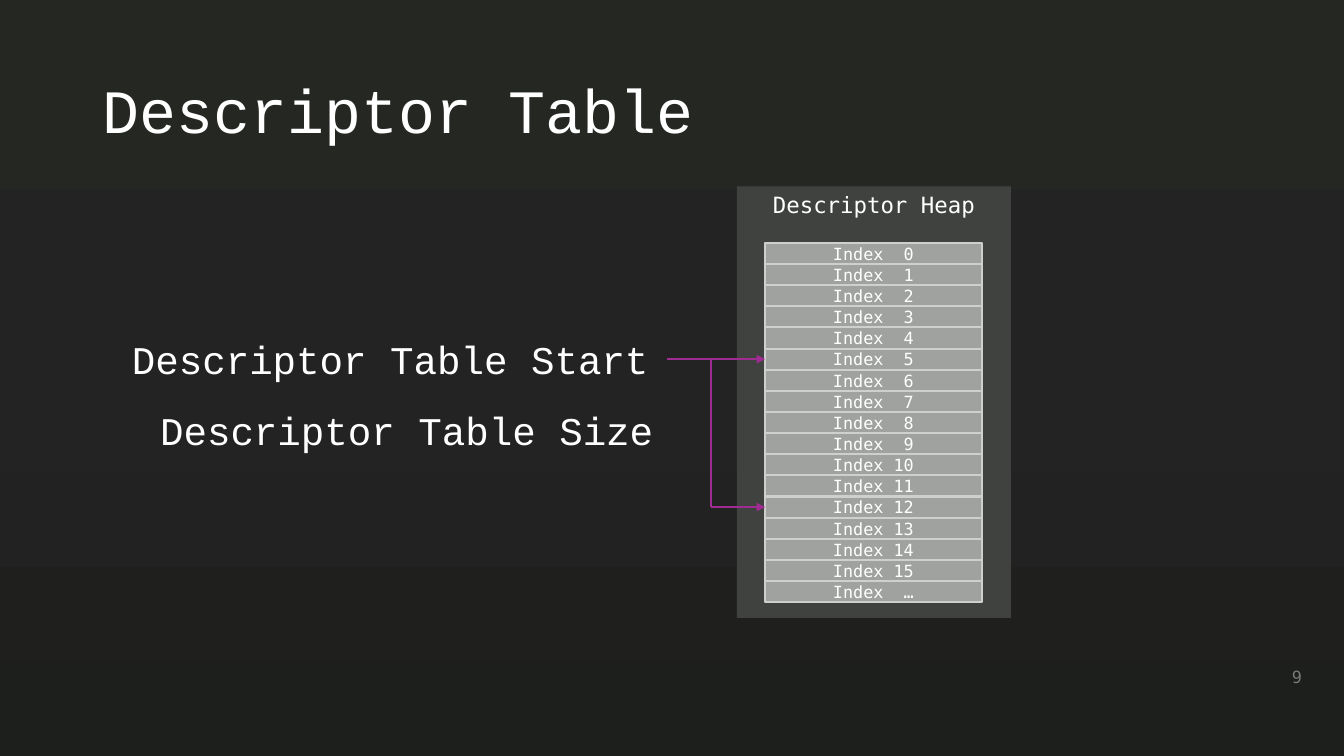
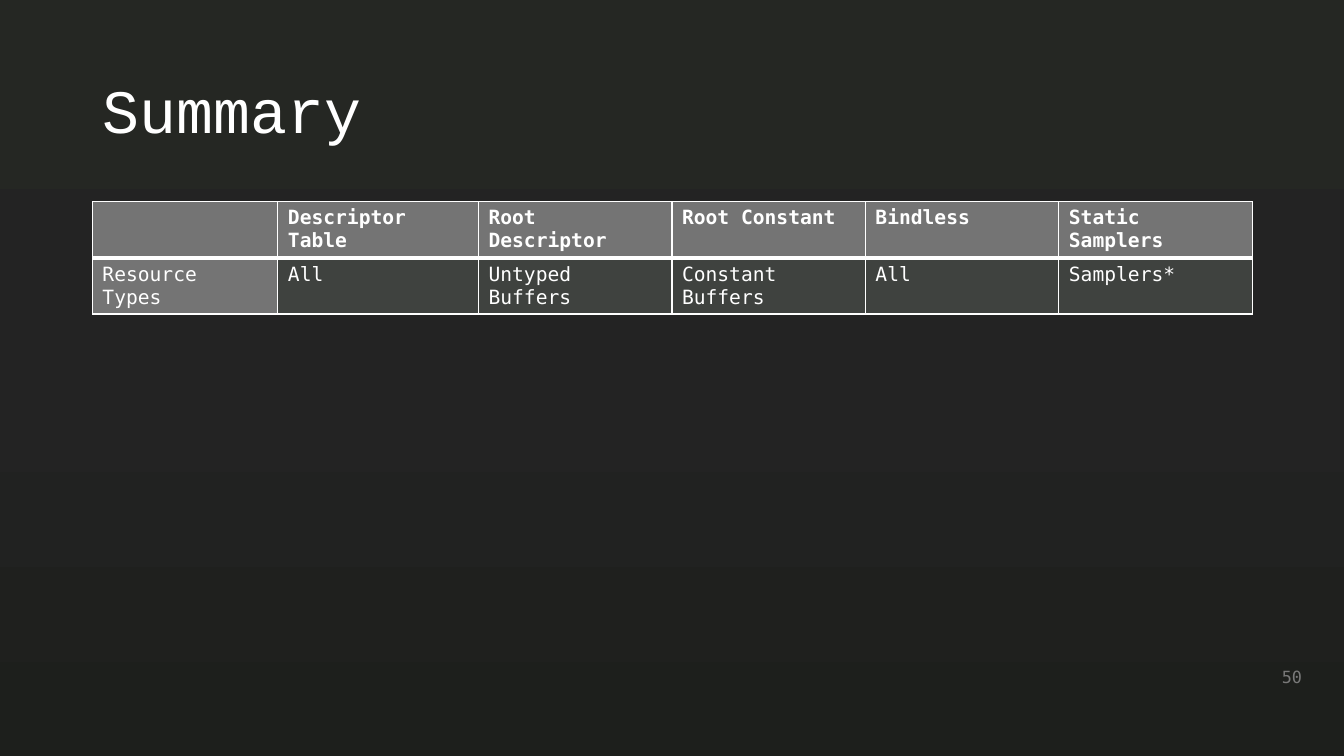
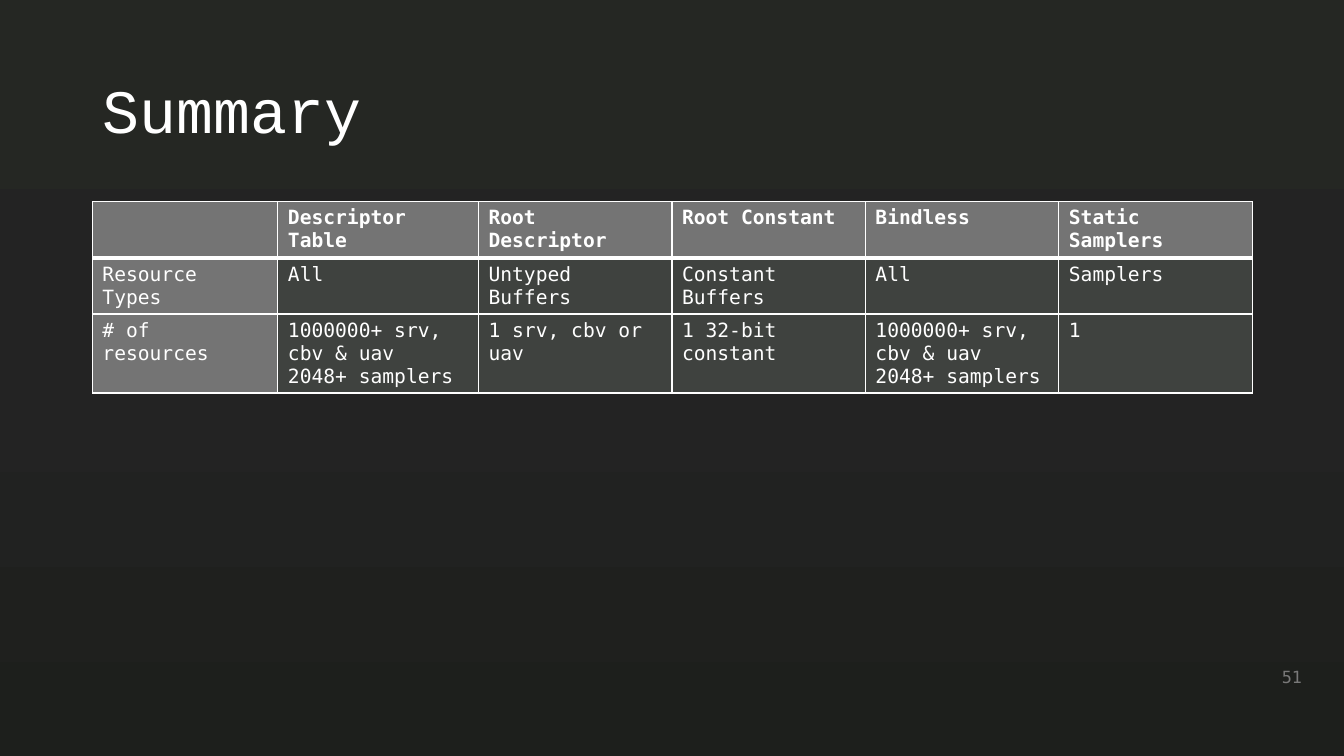
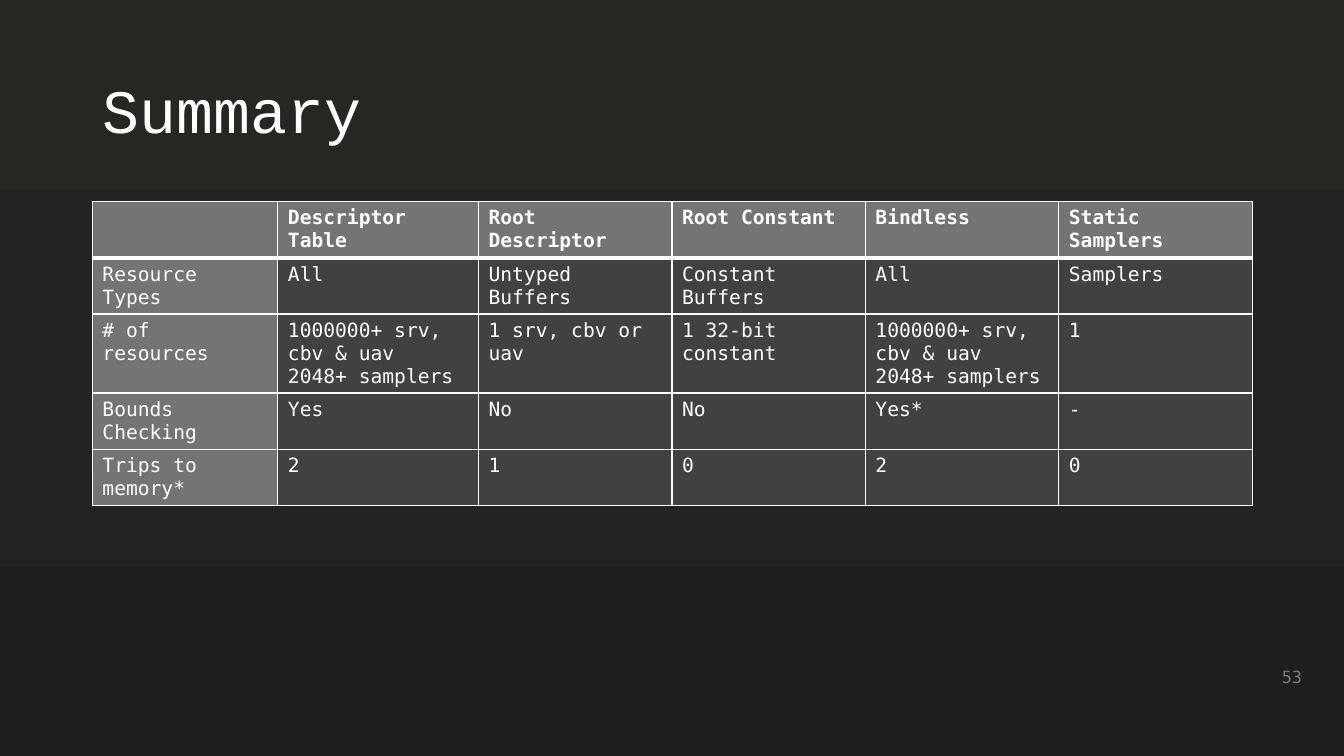
from copy import deepcopy
from dataclasses import dataclass
from typing import Optional

from lxml.etree import SubElement
from pptx import Presentation
from pptx.dml.color import RGBColor
from pptx.enum.shapes import MSO_CONNECTOR, MSO_SHAPE
from pptx.enum.text import MSO_ANCHOR, MSO_AUTO_SIZE, PP_ALIGN
from pptx.oxml import parse_xml
from pptx.oxml.ns import nsdecls, qn
from pptx.presentation import Presentation as Deck
from pptx.shapes.autoshape import Shape
from pptx.slide import Slide
from pptx.table import _Cell
from pptx.text.text import TextFrame
from pptx.util import Emu, Inches, Pt

COLS, ROWS = 96, 54
UNIT = Inches(7.5) / ROWS


def grid(n: float) -> Emu:
    """Turn grid columns or rows into a length."""
    return Emu(round(n * UNIT))


@dataclass(frozen=True)
class Theme:
    """Colours, fonts and type sizes of the deck."""
    backdrop: tuple[str, ...] = ("252723", "232323", "1D1F1C")
    text: str = "FFFFFF"
    muted: str = "797979"
    panel: str = "3F423F"
    heading: str = "747474"
    slot: str = "9FA29F"
    slot_line: str = "CFCFCF"
    arrow: str = "A02B93"
    display: str = "Courier New"
    mono: str = "DejaVu Sans Mono"
    title_size: int = 44
    label_size: int = 28
    panel_size: int = 16
    table_size: int = 14
    small_size: int = 12
    line: float = 1.5
    border: float = 1
    rule: float = 3


@dataclass(frozen=True)
class Box:
    """A rectangle in grid columns and rows."""
    x: float
    y: float
    w: float
    h: float

    @property
    def right(self) -> float:
        """Give the right edge."""
        return self.x + self.w

    @property
    def emu(self) -> tuple[Emu, Emu, Emu, Emu]:
        """Give left, top, width and height as lengths."""
        return grid(self.x), grid(self.y), grid(self.w), grid(self.h)


@dataclass(frozen=True)
class Style:
    """How a piece of text is set."""
    font: str
    size: float
    color: str
    bold: bool = False
    align: PP_ALIGN = PP_ALIGN.LEFT
    anchor: MSO_ANCHOR = MSO_ANCHOR.TOP
    spacing: Optional[float] = None


@dataclass(frozen=True)
class Summary:
    """A summary slide: its number and its table body."""
    number: int
    rows: tuple[tuple[str, ...], ...]


T = Theme()
TITLE = Style(T.display, T.title_size, T.text, anchor=MSO_ANCHOR.MIDDLE, spacing=0.9)
NUMBER = Style(T.mono, T.small_size, T.muted, align=PP_ALIGN.RIGHT, anchor=MSO_ANCHOR.MIDDLE)
PANEL = Style(T.mono, T.panel_size, T.text, align=PP_ALIGN.CENTER)
SLOT = Style(T.mono, T.small_size, T.text, align=PP_ALIGN.CENTER, anchor=MSO_ANCHOR.MIDDLE)
LABEL = Style(T.display, T.label_size, T.text)
CELL = Style(T.mono, T.table_size, T.text)
HEAD = Style(T.mono, T.table_size, T.text, bold=True)

TITLE_BOX = Box(6.6, 2.88, 82.8, 10.44)
NUMBER_BOX = Box(72.12, 46.9, 21.6, 2.88)
HEAP_BOX = Box(52.63, 13.32, 19.58, 30.82)
FIRST_SLOT = Box(54.65, 17.35, 15.48, 1.51)
START_BOX = Box(8.71, 23.62, 38.95, 4.1)
SIZE_BOX = Box(10.73, 28.66, 36.93, 4.1)
BRACKET_X = 50.8
FIRST_INDEX, LAST_INDEX = 5, 12
INDEXES = [*map(str, range(16)), "…"]

TABLE_TOP, ROW_H = 14.4, 2.95
COL_WIDTHS = (13.25, 14.33, *[13.82] * 4)
HEADER = ("", "Descriptor Table", "Root Descriptor", "Root Constant", "Bindless", "Static Samplers")
TYPES = ("Resource Types", "All", "Untyped Buffers", "Constant Buffers", "All", "Samplers")
MANY = "1000000+ srv, cbv & uav\n2048+ samplers"
COUNTS = ("# of resources", MANY, "1 srv, cbv or uav", "1 32-bit constant", MANY, "1")
BOUNDS = ("Bounds Checking", "Yes", "No", "No", "Yes*", "-")
TRIPS = ("Trips to memory*", "2", "1", "0", "2", "0")
SUMMARIES = (
    Summary(50, ((*TYPES[:-1], "Samplers*"),)),
    Summary(51, (TYPES, COUNTS)),
    Summary(53, (TYPES, COUNTS, BOUNDS, TRIPS)),
)


def rgb(color: str) -> RGBColor:
    """Read a hex colour."""
    return RGBColor.from_string(color)


def write(tf: TextFrame, text: str, style: Style) -> None:
    """Fill a text frame, one paragraph a line."""
    for i, line in enumerate(text.split("\n")):
        p = tf.add_paragraph() if i else tf.paragraphs[0]
        p.alignment = style.align
        if style.spacing:
            p.line_spacing = style.spacing
        r = p.add_run()
        r.text = line
        r.font.name = style.font
        r.font.size = Pt(style.size)
        r.font.bold = style.bold
        r.font.color.rgb = rgb(style.color)


def frame(sp: Shape, text: str, style: Style) -> None:
    """Set the text of a shape."""
    tf = sp.text_frame
    tf.word_wrap = True
    tf.auto_size = MSO_AUTO_SIZE.NONE
    tf.vertical_anchor = style.anchor
    write(tf, text, style)


def add_text(s: Slide, box: Box, text: str, style: Style) -> None:
    """Add a text box."""
    frame(s.shapes.add_textbox(*box.emu), text, style)


def add_rect(s: Slide, box: Box, text: str, style: Style, fill: str, line: str = "") -> None:
    """Add a filled rectangle with text."""
    sp = s.shapes.add_shape(MSO_SHAPE.RECTANGLE, *box.emu)
    sp.shadow.inherit = False
    sp.fill.solid()
    sp.fill.fore_color.rgb = rgb(fill)
    if line:
        sp.line.color.rgb = rgb(line)
        sp.line.width = Pt(T.line)
    else:
        sp.line.fill.background()
    frame(sp, text, style)


def add_line(s: Slide, x1: float, y1: float, x2: float, y2: float, arrow: bool = True) -> None:
    """Add a straight line, with an arrowhead at its end if asked."""
    cn = s.shapes.add_connector(MSO_CONNECTOR.STRAIGHT, grid(x1), grid(y1), grid(x2), grid(y2))
    cn.line.color.rgb = rgb(T.arrow)
    cn.line.width = Pt(T.line)
    sp_pr = cn.element.spPr
    if arrow:
        SubElement(sp_pr.find(qn("a:ln")), qn("a:tailEnd"), type="triangle")
    SubElement(sp_pr, qn("a:effectLst"))


def set_borders(cell: _Cell, row: int) -> None:
    """Draw the cell borders, with a thick rule under the header."""
    tc_pr = cell._tc.get_or_add_tcPr()
    thick = {(0, "B"), (1, "T")}
    for i, side in enumerate("LRTB"):
        width = Pt(T.rule if (row, side) in thick else T.border)
        tc_pr.insert(i, parse_xml(
            f'<a:ln{side} {nsdecls("a")} w="{width}"><a:solidFill>'
            f'<a:srgbClr val="{T.text}"/></a:solidFill></a:ln{side}>'))


def add_table(s: Slide, rows: tuple[tuple[str, ...], ...]) -> None:
    """Add a table with a header row and a heading column."""
    box = Box(TITLE_BOX.x, TABLE_TOP, sum(COL_WIDTHS), ROW_H * len(rows))
    table = s.shapes.add_table(len(rows), len(COL_WIDTHS), *box.emu).table
    table.horz_banding = False
    for col, width in zip(table.columns, COL_WIDTHS):
        col.width = grid(width)
    for i, row in enumerate(rows):
        for j, text in enumerate(row):
            cell = table.cell(i, j)
            cell.fill.solid()
            cell.fill.fore_color.rgb = rgb(T.panel if i and j else T.heading)
            set_borders(cell, i)
            if text:
                write(cell.text_frame, text, CELL if i else HEAD)


def set_backdrop(prs: Deck) -> None:
    """Give the slide master its vertical gradient."""
    master = prs.slide_master
    fill = master.background.fill
    fill.gradient()
    fill.gradient_angle = 270
    stops = master.element.cSld.find(".//" + qn("a:gsLst"))
    stops.append(deepcopy(stops[-1]))
    for i, (stop, color) in enumerate(zip(fill.gradient_stops, T.backdrop)):
        stop.color.rgb = rgb(color)
        stop.position = i / (len(T.backdrop) - 1)


def new_slide(prs: Deck, title: str, number: int) -> Slide:
    """Add a slide with its title and number."""
    s = prs.slides.add_slide(prs.slide_layouts.get_by_name("Title Only"))
    sp = s.shapes.title
    sp.left, sp.top, sp.width, sp.height = TITLE_BOX.emu
    frame(sp, title, TITLE)
    add_text(s, NUMBER_BOX, str(number), NUMBER)
    return s


def slot_box(i: int) -> Box:
    """Place the slot with the given index."""
    f = FIRST_SLOT
    return Box(f.x, f.y + i * f.h, f.w, f.h)


def slot_middle(i: int) -> float:
    """Give the height of a slot's centre line."""
    return FIRST_SLOT.y + (i + 0.5) * FIRST_SLOT.h


def heap_slide(prs: Deck) -> None:
    """Draw the descriptor heap and the table range inside it."""
    s = new_slide(prs, "Descriptor Table", 9)
    add_rect(s, HEAP_BOX, "Descriptor Heap", PANEL, T.panel)
    for i, name in enumerate(INDEXES):
        add_rect(s, slot_box(i), f"Index {name:>2}", SLOT, T.slot, T.slot_line)
    add_text(s, START_BOX, "Descriptor Table Start", LABEL)
    add_text(s, SIZE_BOX, "Descriptor Table Size", LABEL)
    top, bottom = slot_middle(FIRST_INDEX), slot_middle(LAST_INDEX)
    add_line(s, START_BOX.right, top, FIRST_SLOT.x, top)
    add_line(s, BRACKET_X, top, BRACKET_X, bottom, arrow=False)
    add_line(s, BRACKET_X, bottom, FIRST_SLOT.x, bottom)


def main() -> None:
    """Build and save the deck."""
    prs = Presentation()
    prs.slide_width, prs.slide_height = grid(COLS), grid(ROWS)
    set_backdrop(prs)
    heap_slide(prs)
    for summary in SUMMARIES:
        s = new_slide(prs, "Summary", summary.number)
        add_table(s, (HEADER, *summary.rows))
    prs.save("out.pptx")


if __name__ == "__main__":
    main()
